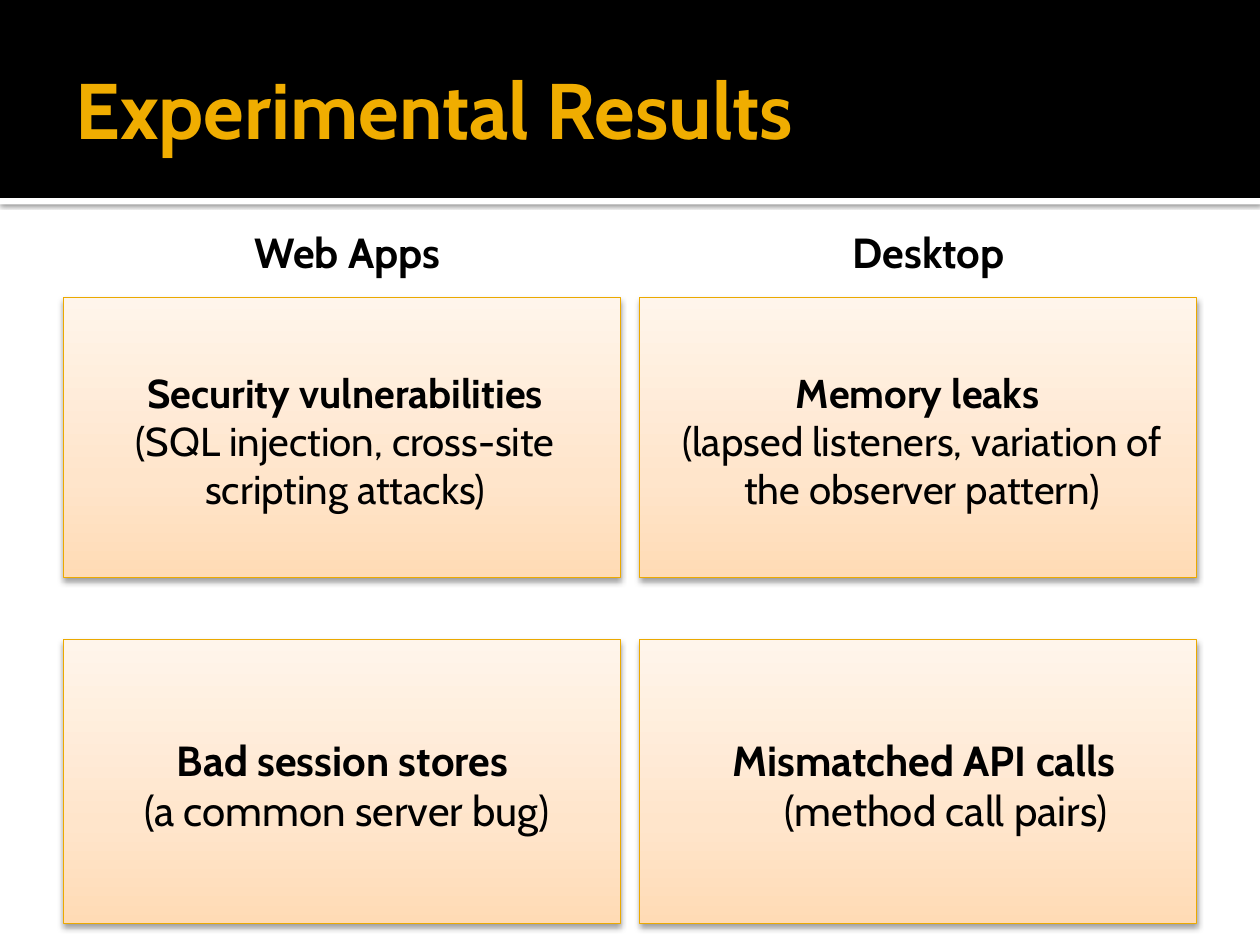
from copy import deepcopy

from lxml import etree
from pptx import Presentation
from pptx.dml.color import RGBColor
from pptx.enum.shapes import MSO_SHAPE
from pptx.enum.text import MSO_ANCHOR, PP_ALIGN
from pptx.oxml.ns import qn
from pptx.util import Cm, Pt

RECTANGLE = MSO_SHAPE.RECTANGLE
MIDDLE = MSO_ANCHOR.MIDDLE
CENTER = PP_ALIGN.CENTER

FONT = "Cabin"
TITLE = "Experimental Results"
HEADINGS = [("Web Apps", 4.88, 7.19), ("Desktop", 16.94, 3.7)]  # text, left, width

# Each paragraph is a list of (text, bold) runs.
CARD_ROWS = [
    [
        [[("Security vulnerabilities", True)],
         [("(SQL injection, cross-site scripting attacks)", False)]],
        [[("Memory leaks ", True)],
         [("(lapsed listeners, variation of the observer pattern)", False)]],
    ],
    [
        [[("Bad session stores ", True)], [("(a common server bug)", False)]],
        [[("Mismatched API calls ", True), ("(method call pairs)", False)]],
    ],
]
ROW_STYLES = [
    {"top": 5.99, "height": 5.66, "size": 23, "left_inset": 0.41, "hanging": False},
    {"top": 12.9, "height": 5.72, "size": 24, "left_inset": 0.15, "hanging": True},
]
CARD_LEFT, CARD_WIDTH, CARD_GAP = 1.27, 11.23, 0.4
CARD_GRADIENT = [(0, "FFDBB5"), (0.35, "FFE5CB"), (1, "FFF5EB")]


def color(hex_string):
    return RGBColor.from_string(hex_string)


def format_run(run, size, hex_string="000000", bold=True):
    run.font.name = FONT
    run.font.size = Pt(size)
    run.font.bold = bold
    run.font.color.rgb = color(hex_string)


def add_rectangle(slide, left, top, width, height):
    shape = slide.shapes.add_shape(RECTANGLE, Cm(left), Cm(top), Cm(width), Cm(height))
    shape.shadow.inherit = False
    return shape


def add_band(slide, top, height, hex_string):
    band = add_rectangle(slide, 0, top, 25.4, height)
    band.fill.solid()
    band.fill.fore_color.rgb = color(hex_string)
    band.line.fill.background()
    return band


def add_shadow(shape, blur, distance, opacity):
    """Cast a black shadow straight down; blur and distance are in points."""
    effects = shape._element.spPr.find(qn("a:effectLst"))
    shadow = etree.SubElement(
        effects, qn("a:outerShdw"), blurRad=str(Pt(blur)), dist=str(Pt(distance)),
        dir="5400000", algn="ctr", rotWithShape="0")
    black = etree.SubElement(shadow, qn("a:srgbClr"), val="000000")
    etree.SubElement(black, qn("a:alpha"), val=str(opacity * 1000))


def fill_with_gradient(shape, stops):
    shape.fill.gradient()
    shape.fill.gradient_angle = 90
    stop_list = shape._element.spPr.find(qn("a:gradFill")).find(qn("a:gsLst"))
    while len(stop_list) < len(stops):
        stop_list.append(deepcopy(stop_list[-1]))
    for stop, (position, hex_string) in zip(shape.fill.gradient_stops, stops):
        stop.position = position
        stop.color.rgb = color(hex_string)


def set_insets(frame, left, top, right, bottom):
    frame.margin_left, frame.margin_top = Cm(left), Cm(top)
    frame.margin_right, frame.margin_bottom = Cm(right), Cm(bottom)


def add_label(slide, text, left, top, width, height, size, hex_string="000000"):
    box = slide.shapes.add_textbox(Cm(left), Cm(top), Cm(width), Cm(height))
    frame = box.text_frame
    frame.word_wrap = True
    frame.text = text
    format_run(frame.paragraphs[0].runs[0], size, hex_string)
    return frame


def add_card(slide, column, style, paragraphs):
    left = CARD_LEFT + column * (CARD_WIDTH + CARD_GAP)
    card = add_rectangle(slide, left, style["top"], CARD_WIDTH, style["height"])
    fill_with_gradient(card, CARD_GRADIENT)
    card.line.color.rgb = color("EBA900")
    card.line.width = Pt(0.5)
    add_shadow(card, 3.5, 2, 38)

    frame = card.text_frame
    frame.word_wrap = True
    frame.vertical_anchor = MIDDLE
    set_insets(frame, style["left_inset"], 0.25, 0.25, 0.13)
    for index, runs in enumerate(paragraphs):
        paragraph = frame.add_paragraph() if index else frame.paragraphs[0]
        paragraph.alignment = CENTER
        if style["hanging"]:
            properties = paragraph._p.get_or_add_pPr()
            properties.set("marL", str(Cm(1.22)))
            properties.set("indent", str(Cm(-0.89)))
        for text, bold in runs:
            run = paragraph.add_run()
            run.text = text
            format_run(run, style["size"], bold=bold)


def main():
    presentation = Presentation()
    presentation.slide_width, presentation.slide_height = Cm(25.4), Cm(19.05)
    slide = presentation.slides.add_slide(presentation.slide_layouts[6])

    stripe = add_band(slide, 3.99, 0.13, "FFFFFF")
    add_shadow(stripe, 2.5, 0.8, 60)
    add_band(slide, 0, 3.99, "000000")

    title = add_label(slide, TITLE, 1.27, 0.43, 22.86, 3.48, 45, "F0AD00")
    title.vertical_anchor = MIDDLE
    set_insets(title, 0.25, 0.13, 0.13, 0.13)

    for style, cards in zip(ROW_STYLES, CARD_ROWS):
        for column, paragraphs in enumerate(cards):
            add_card(slide, column, style, paragraphs)
    for text, left, width in HEADINGS:
        add_label(slide, text, left, 4.45, width, 1.27, 24)

    presentation.save("out.pptx")


if __name__ == "__main__":
    main()
